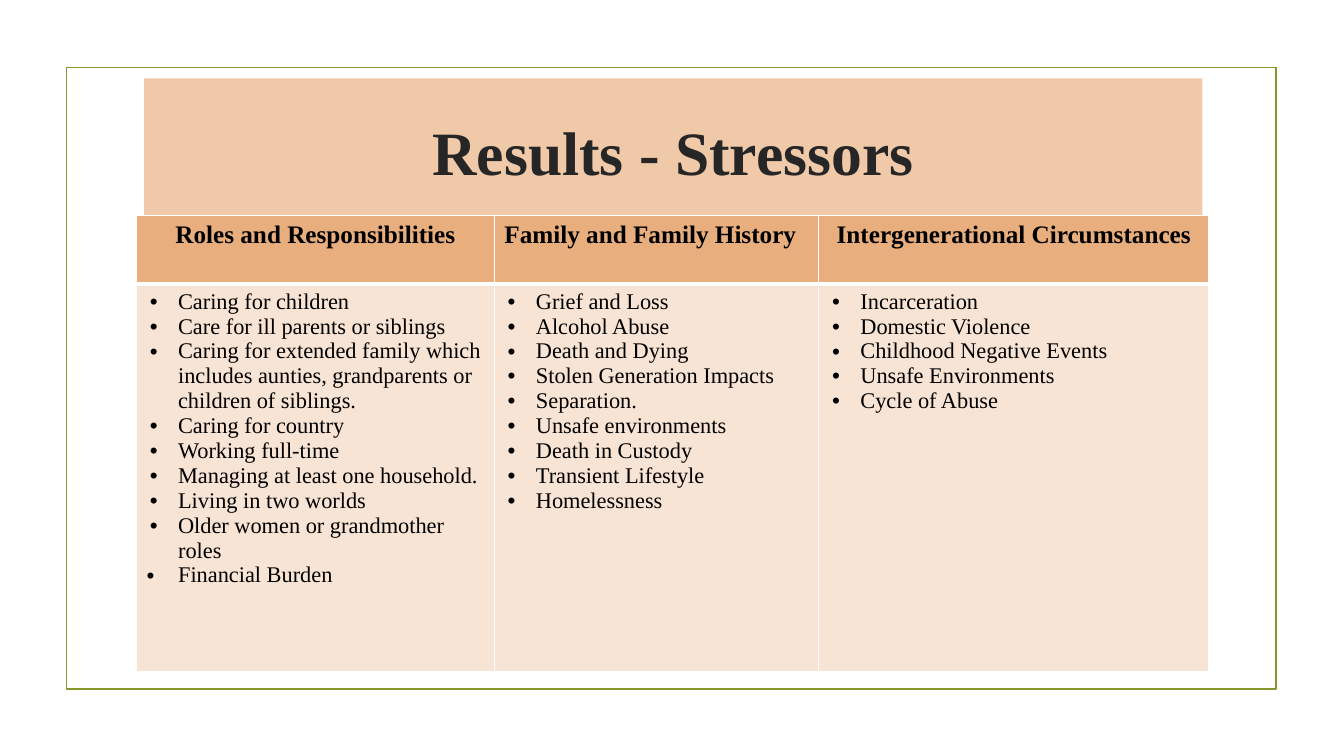
"""Build the slide that lists stressors in three columns."""
from lxml.etree import SubElement
from pptx import Presentation
from pptx.dml.color import RGBColor
from pptx.enum.shapes import MSO_SHAPE as Shape
from pptx.enum.text import MSO_ANCHOR as Anchor, PP_ALIGN as Align
from pptx.oxml.ns import qn
from pptx.util import Pt

FONT = "Times New Roman"
COLORS = {
    "frame": "83992A", "banner": "F0C9A9", "title": "262626",
    "header": "E8AE7E", "body": "F7E4D4", "text": "000000", "rule": "FFFFFF",
}
INDENT = 22.5
HANGING = 20.25
COLUMNS = [
    ("Roles and Responsibilities", Align.CENTER, 255.6, [
        "Caring for children",
        "Care for ill parents or siblings",
        "Caring for extended family which includes aunties, "
        "grandparents or children of siblings.",
        "Caring for country",
        "Working full-time",
        "Managing at least one household.",
        "Living in two worlds",
        "Older women or grandmother roles",
        "Financial Burden",
    ]),
    ("Family and Family History", Align.LEFT, 231.8, [
        "Grief and Loss",
        "Alcohol Abuse",
        "Death and Dying",
        "Stolen Generation Impacts",
        "Separation.",
        "Unsafe environments",
        "Death in Custody",
        "Transient Lifestyle",
        "Homelessness",
    ]),
    ("Intergenerational Circumstances", Align.CENTER, 278.6, [
        "Incarceration",
        "Domestic Violence",
        "Childhood Negative Events",
        "Unsafe Environments",
        "Cycle of Abuse",
    ]),
]


def color(role):
    return RGBColor.from_string(COLORS[role])


def add_run(paragraph, text, size, role="text", bold=False):
    run = paragraph.add_run()
    run.text = text
    run.font.name = FONT
    run.font.size = Pt(size)
    run.font.bold = bold
    run.font.color.rgb = color(role)


def add_box(slide, left, top, width, height):
    box = slide.shapes.add_shape(
        Shape.RECTANGLE, Pt(left), Pt(top), Pt(width), Pt(height))
    box.shadow.inherit = False
    return box


def add_frame(slide):
    frame = add_box(slide, 47.5, 48.2, 864, 444.2)
    frame.fill.background()
    frame.line.color.rgb = color("frame")
    frame.line.width = Pt(1.25)


def add_title(slide, text):
    banner = add_box(slide, 102.9, 56, 756, 103)
    banner.fill.solid()
    banner.fill.fore_color.rgb = color("banner")
    banner.line.fill.background()
    banner.text_frame.word_wrap = True
    banner.text_frame.vertical_anchor = Anchor.MIDDLE
    heading = banner.text_frame.paragraphs[0]
    heading.alignment = Align.CENTER
    add_run(heading, text, 44, "title", bold=True)


def style_cell(cell, role, top, bottom):
    properties = cell._tc.get_or_add_tcPr()
    for side, width in (("L", 1), ("R", 1), ("T", top), ("B", bottom)):
        rule = SubElement(properties, qn(f"a:ln{side}"), w=str(Pt(width)))
        fill = SubElement(rule, qn("a:solidFill"))
        SubElement(fill, qn("a:srgbClr"), val=COLORS["rule"])
    cell.fill.solid()
    cell.fill.fore_color.rgb = color(role)


def add_bullet(paragraph, text, hanging):
    properties = paragraph._p.get_or_add_pPr()
    properties.set("marL", str(Pt(INDENT)))
    properties.set("indent", str(-Pt(hanging)))
    SubElement(properties, qn("a:buFont"), typeface="Arial")
    SubElement(properties, qn("a:buChar"), char="•")
    add_run(paragraph, text, 16)


def add_stressor_table(slide):
    total_width = sum(width for _, _, width, _ in COLUMNS)
    table = slide.shapes.add_table(
        2, len(COLUMNS), Pt(97.5), Pt(154), Pt(total_width), Pt(326)).table
    table.rows[0].height = Pt(49)
    table.rows[1].height = Pt(277)
    for index, (heading, alignment, width, stressors) in enumerate(COLUMNS):
        table.columns[index].width = Pt(width)

        header = table.cell(0, index)
        style_cell(header, "header", top=1, bottom=3)
        title = header.text_frame.paragraphs[0]
        title.alignment = alignment
        add_run(title, heading, 18, bold=True)

        body = table.cell(1, index)
        style_cell(body, "body", top=3, bottom=1)
        for position, stressor in enumerate(stressors):
            frame = body.text_frame
            item = frame.add_paragraph() if position else frame.paragraphs[0]
            hanging = INDENT if stressor == "Financial Burden" else HANGING
            add_bullet(item, stressor, hanging)


def main():
    deck = Presentation()
    deck.slide_width, deck.slide_height = Pt(960), Pt(540)
    slide = deck.slides.add_slide(deck.slide_layouts[6])
    add_frame(slide)
    add_title(slide, "Results - Stressors")
    add_stressor_table(slide)
    deck.save("out.pptx")


if __name__ == "__main__":
    main()
